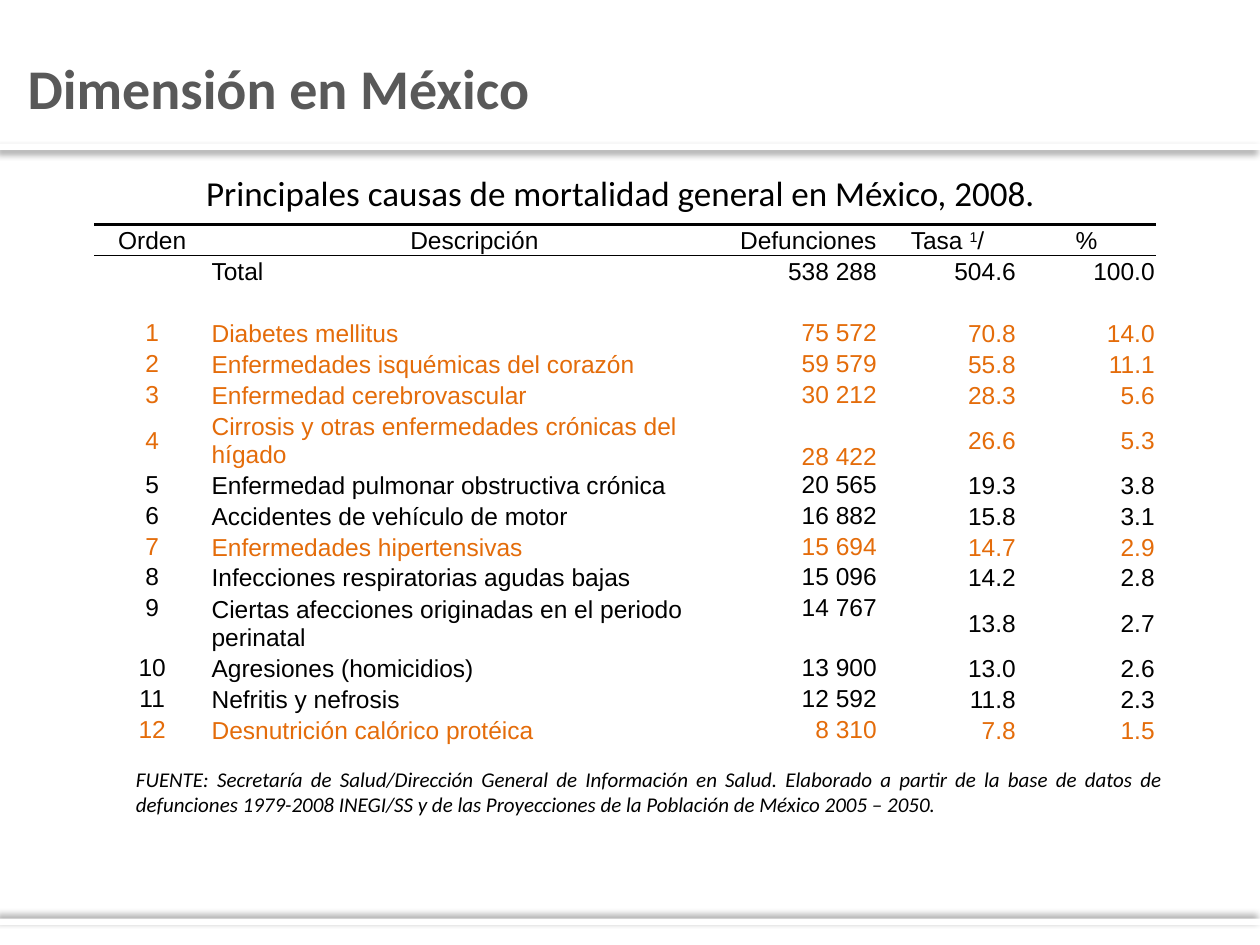
from lxml.etree import SubElement
from pptx import Presentation
from pptx.dml.color import RGBColor
from pptx.enum.shapes import MSO_SHAPE
from pptx.enum.text import MSO_ANCHOR as Anchor, MSO_AUTO_SIZE as AutoSize, PP_ALIGN as Align
from pptx.oxml import parse_xml
from pptx.oxml.ns import nsdecls, qn
from pptx.util import Pt

COLORS = {"black": "000000", "white": "FFFFFF", "title": "595959", "accent": "E46C0A"}
NO_STYLE = "{2D5ABB26-0587-4C30-8999-92F81FD0307C}"

TITLE_FONT = {"name": "Calibri", "size": Pt(32), "bold": True}
CAPTION_FONT = {"name": "Calibri", "size": Pt(20)}
SOURCE_FONT = {"name": "Calibri", "size": Pt(12), "italic": True}
TABLE_FONT = {"name": "Arial", "size": Pt(14)}

HEADINGS = ["Orden", "Descripción", "Defunciones", "Tasa 1/", "%"]
TOTAL = ["", "Total", "538 288", "504.6", "100.0"]
CAUSES = [
    ("Diabetes mellitus", "75 572", "70.8", "14.0"),
    ("Enfermedades isquémicas del corazón", "59 579", "55.8", "11.1"),
    ("Enfermedad cerebrovascular", "30 212", "28.3", "5.6"),
    ("Cirrosis y otras enfermedades crónicas del hígado", "28 422", "26.6", "5.3"),
    ("Enfermedad pulmonar obstructiva crónica", "20 565", "19.3", "3.8"),
    ("Accidentes de vehículo de motor", "16 882", "15.8", "3.1"),
    ("Enfermedades hipertensivas", "15 694", "14.7", "2.9"),
    ("Infecciones respiratorias agudas bajas", "15 096", "14.2", "2.8"),
    ("Ciertas afecciones originadas en el periodo perinatal", "14 767", "13.8", "2.7"),
    ("Agresiones (homicidios)", "13 900", "13.0", "2.6"),
    ("Nefritis y nefrosis", "12 592", "11.8", "2.3"),
    ("Desnutrición calórico protéica", "8 310", "7.8", "1.5"),
]
HIGHLIGHTED = {1, 2, 3, 4, 7, 12}
TWO_LINE_CAUSES = {4, 9}
COLUMN_WIDTHS = [66.4, 301.9, 79.7, 79.4, 79.4]
LINE_ROW, TWO_LINE_ROW, BLANK_ROW = 16.4, 32.3, 18.5
COLUMN_ALIGN = [Align.CENTER, Align.LEFT, Align.RIGHT, Align.RIGHT, Align.RIGHT]
CAUSE_ANCHORS = [Anchor.TOP, Anchor.MIDDLE, Anchor.TOP, Anchor.MIDDLE, Anchor.MIDDLE]
CIRRHOSIS_ANCHORS = [Anchor.MIDDLE, Anchor.MIDDLE, Anchor.BOTTOM, Anchor.MIDDLE, Anchor.MIDDLE]


def apply(target, values):
    for key, value in values.items():
        setattr(target, key, value)


def rgb(color):
    return RGBColor.from_string(COLORS[color])


def add_run(paragraph, text, font, color):
    run = paragraph.add_run()
    run.text = text
    apply(run.font, font)
    run.font.color.rgb = rgb(color)
    return run


def place(shape, box):
    apply(shape, dict(zip(("left", "top", "width", "height"), map(Pt, box))))


def add_title(slide, box, text):
    title = slide.shapes.title
    place(title, box)
    apply(title.text_frame, {"word_wrap": True, "vertical_anchor": Anchor.TOP,
                             "auto_size": AutoSize.NONE})
    paragraph = title.text_frame.paragraphs[0]
    paragraph.alignment = Align.LEFT
    add_run(paragraph, text, TITLE_FONT, "title")


def add_text(slide, box, text, font, align):
    frame = slide.shapes.add_textbox(*map(Pt, box)).text_frame
    frame.word_wrap = True
    frame.paragraphs[0].alignment = align
    add_run(frame.paragraphs[0], text, font, "black")


def add_rule(slide, box, shadow_angle):
    rule = slide.shapes.add_shape(MSO_SHAPE.RECTANGLE, *map(Pt, box))
    rule.fill.solid()
    rule.fill.fore_color.rgb = rgb("white")
    rule.line.fill.background()
    rule.shadow.inherit = False
    effects = rule._element.spPr.find(qn("a:effectLst"))
    shadow = SubElement(effects, qn("a:outerShdw"), blurRad=str(Pt(4)), dist=str(Pt(3)),
                        dir=str(shadow_angle * 60000), algn="ctr", rotWithShape="0")
    color = SubElement(shadow, qn("a:srgbClr"), val=COLORS["black"])
    SubElement(color, qn("a:alpha"), val="40000")


def add_borders(cell, borders):
    # Border lines come before the fill in the cell properties
    properties = cell._tc.get_or_add_tcPr()
    for index, (side, width) in enumerate(borders.items()):
        properties.insert(index, parse_xml(
            f'<a:ln{side} {nsdecls("a")} w="{Pt(width)}"><a:solidFill>'
            f'<a:srgbClr val="{COLORS["black"]}"/></a:solidFill></a:ln{side}>'))


def fill_cell(cell, text, align, anchor, color, borders):
    apply(cell, {"margin_left": Pt(0.72), "margin_right": Pt(0.72), "margin_top": Pt(0.72),
                 "margin_bottom": Pt(0), "vertical_anchor": anchor})
    cell.fill.background()
    add_borders(cell, borders)
    paragraph = cell.text_frame.paragraphs[0]
    paragraph.alignment = align
    if text == "Tasa 1/":
        add_run(paragraph, "Tasa ", TABLE_FONT, color)
        note_mark = add_run(paragraph, "1", TABLE_FONT, color)
        note_mark._r.get_or_add_rPr().set("baseline", "30000")
        add_run(paragraph, "/", TABLE_FONT, color)
    elif text:
        add_run(paragraph, text, TABLE_FONT, color)
    end = SubElement(paragraph._p, qn("a:endParaRPr"), sz="1400")
    SubElement(end, qn("a:latin"), typeface=TABLE_FONT["name"])


def add_mortality_table(slide, left, top):
    bottom = [Anchor.BOTTOM] * 5
    rows = [
        (LINE_ROW, HEADINGS, [Align.CENTER] * 5, bottom, "black", {"T": 1.5, "B": 0.5}),
        (LINE_ROW, TOTAL, COLUMN_ALIGN, bottom, "black", {}),
        (BLANK_ROW, [""] * 5, COLUMN_ALIGN, bottom, "black", {}),
    ]
    for order, cause in enumerate(CAUSES, 1):
        height = TWO_LINE_ROW if order in TWO_LINE_CAUSES else LINE_ROW
        anchors = CIRRHOSIS_ANCHORS if order == 4 else CAUSE_ANCHORS
        color = "accent" if order in HIGHLIGHTED else "black"
        rows.append((height, [str(order), *cause], COLUMN_ALIGN, anchors, color, {}))

    box = (left, top, sum(COLUMN_WIDTHS), sum(row[0] for row in rows))
    table = slide.shapes.add_table(len(rows), len(HEADINGS), *map(Pt, box)).table
    apply(table, {"first_row": False, "horz_banding": False})
    table._tbl.tblPr.find(qn("a:tableStyleId")).text = NO_STYLE
    for column, width in zip(table.columns, COLUMN_WIDTHS):
        column.width = Pt(width)
    for row, (height, texts, aligns, anchors, color, borders) in zip(table.rows, rows):
        row.height = Pt(height)
        for cell, text, align, anchor in zip(row.cells, texts, aligns, anchors):
            fill_cell(cell, text, align, anchor, color, borders)


def main():
    deck = Presentation()
    apply(deck, {"slide_width": Pt(720), "slide_height": Pt(540)})
    slide = deck.slides.add_slide(deck.slide_layouts[5])

    # Shadowed rules below the title and at the foot
    add_rule(slide, (0, 82.1, 720, 3.6), 135)
    add_rule(slide, (0, 524.9, 720, 3.6), 225)

    # Title and table caption
    add_title(slide, (8.6, 26.9, 408, 56), "Dimensión en México")
    add_text(slide, (25.2, 94.3, 658.8, 28),
             "Principales causas de mortalidad general en México, 2008.", CAPTION_FONT, Align.CENTER)

    # Causes of death and their source
    add_mortality_table(slide, 53.8, 128.2)
    add_text(slide, (70.6, 434.2, 601, 36),
             "FUENTE: Secretaría de Salud/Dirección General de Información en Salud. Elaborado a partir "
             "de la base de datos de defunciones 1979-2008 INEGI/SS y de las Proyecciones de la Población "
             "de México 2005 – 2050.", SOURCE_FONT, Align.JUSTIFY)

    deck.save("out.pptx")


if __name__ == "__main__":
    main()
